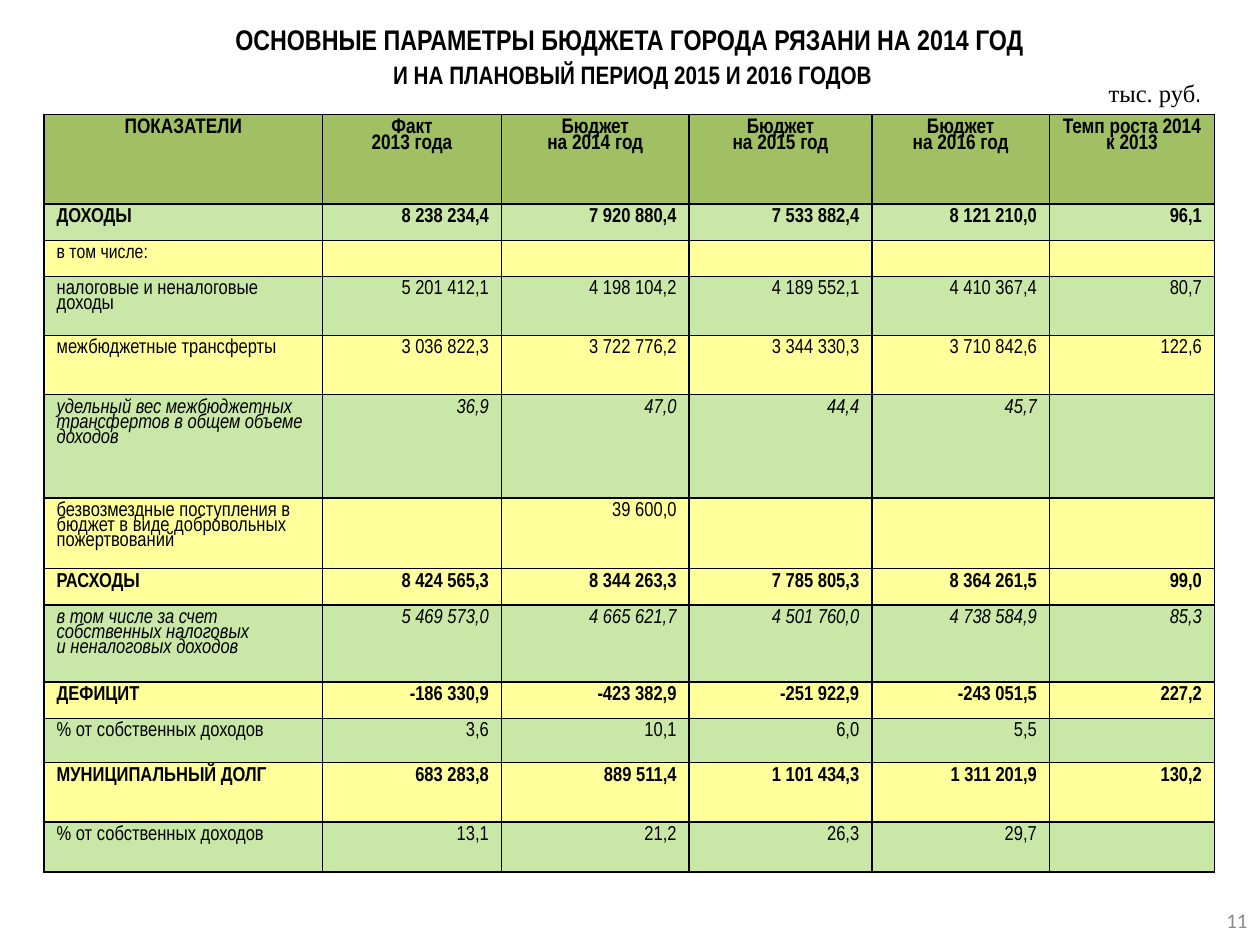
from lxml.etree import SubElement
from pptx import Presentation
from pptx.dml.color import RGBColor
from pptx.enum.text import MSO_ANCHOR, PP_ALIGN
from pptx.oxml.ns import qn
from pptx.util import Inches, Pt

COLORS = {"black": "000000", "header": "A1C064", "green": "C9E7A7",
          "yellow": "FFFF9B", "number": "8C8C8C"}


def write(paragraph, text, size=11.5, font="Arial Narrow", color="black",
          bold=False, italic=False, align=None, spacing=None):
    paragraph.alignment = align
    paragraph.line_spacing = spacing
    if not text:  # an empty cell still needs its text size to keep the row low
        SubElement(paragraph._p, qn("a:endParaRPr"), sz=str(int(size * 100)))
        return
    run = paragraph.add_run()
    run.text = text
    run.font.size = Pt(size)
    run.font.name = font
    run.font.bold = bold
    run.font.italic = italic
    run.font.color.rgb = RGBColor.from_string(COLORS[color])


def style_cell(cell, fill):
    """Draw black borders on all sides, then fill the cell."""
    properties = cell._tc.get_or_add_tcPr()
    for side in ("a:lnL", "a:lnR", "a:lnT", "a:lnB"):
        border = SubElement(properties, qn(side), w=str(Pt(1)))
        solid = SubElement(border, qn("a:solidFill"))
        SubElement(solid, qn("a:srgbClr"), val=COLORS["black"])
    cell.fill.solid()
    cell.fill.fore_color.rgb = RGBColor.from_string(COLORS[fill])


deck = Presentation()
deck.slide_width, deck.slide_height = Inches(10), Inches(7.5)
slide = deck.slides.add_slide(deck.slide_layouts[6])
unit = deck.slide_width // 100  # the slide is a grid of 100 by 75 units

# Title
title = slide.shapes.add_textbox(4.3 * unit, 1.3 * unit, 91.3 * unit, 4.7 * unit).text_frame
title.word_wrap = True
heading = title.paragraphs[0]
write(heading, "ОСНОВНЫЕ ПАРАМЕТРЫ БЮДЖЕТА ГОРОДА РЯЗАНИ НА 2014 ГОД",
      size=16.2, bold=True, align=PP_ALIGN.CENTER)
heading.add_line_break()
write(heading, " ", size=16.2, bold=True, align=PP_ALIGN.CENTER)
write(heading, "И НА ПЛАНОВЫЙ ПЕРИОД 2015 И 2016 ГОДОВ",
      size=14.4, bold=True, align=PP_ALIGN.CENTER)

# Budget table: row height in units, fill, text format, cells
column_widths = [22.1, 14.2, 14.9, 14.5, 14.1, 13.1]
header = {"size": 12, "bold": True}
plain, total, share = {}, {"bold": True}, {"italic": True}
budget_rows = [
    (7.1, "header", header, ["ПОКАЗАТЕЛИ", "Факт\n2013 года", "Бюджет\nна 2014 год",
                             "Бюджет\nна 2015 год", "Бюджет\nна 2016 год",
                             "Темп роста 2014 к 2013"]),
    (2.9, "green", total, ["ДОХОДЫ", "8 238 234,4", "7 920 880,4", "7 533 882,4",
                           "8 121 210,0", "96,1"]),
    (2.5, "yellow", {"size": 11}, ["в том числе:", "", "", "", "", ""]),
    (4.7, "green", plain, ["налоговые и неналоговые доходы", "5 201 412,1", "4 198 104,2",
                           "4 189 552,1", "4 410 367,4", "80,7"]),
    (4.7, "yellow", plain, ["межбюджетные трансферты", "3 036 822,3", "3 722 776,2",
                            "3 344 330,3", "3 710 842,6", "122,6"]),
    (8.2, "green", share, ["удельный вес межбюджетных трансфертов в общем объеме доходов",
                           "36,9", "47,0", "44,4", "45,7", ""]),
    (5.5, "yellow", plain, ["безвозмездные поступления в бюджет в виде добровольных "
                            "пожертвований", "", "39 600,0", "", "", ""]),
    (2.9, "yellow", total, ["РАСХОДЫ", "8 424 565,3", "8 344 263,3", "7 785 805,3",
                            "8 364 261,5", "99,0"]),
    (6.1, "green", share, ["в том числе за счет собственных налоговых\n"
                           "и неналоговых доходов", "5 469 573,0", "4 665 621,7",
                           "4 501 760,0", "4 738 584,9", "85,3"]),
    (2.9, "yellow", total, ["ДЕФИЦИТ", "-186 330,9", "-423 382,9", "-251 922,9",
                            "-243 051,5", "227,2"]),
    (3.5, "green", plain, ["% от собственных доходов", "3,6", "10,1", "6,0", "5,5", ""]),
    (4.7, "yellow", total, ["МУНИЦИПАЛЬНЫЙ ДОЛГ", "683 283,8", "889 511,4", "1 101 434,3",
                            "1 311 201,9", "130,2"]),
    (4, "green", plain, ["% от собственных доходов", "13,1", "21,2", "26,3", "29,7", ""]),
]
budget = slide.shapes.add_table(
    len(budget_rows), len(column_widths), 3.5 * unit, 9.1 * unit,
    int(sum(column_widths) * unit), int(sum(row[0] for row in budget_rows) * unit)).table
budget.horz_banding = False
for column, width in zip(budget.columns, column_widths):
    column.width = int(width * unit)
for r, (height, fill, text_format, values) in enumerate(budget_rows):
    budget.rows[r].height = int(height * unit)
    for c, value in enumerate(values):
        cell = budget.cell(r, c)
        style_cell(cell, fill)
        if r == 0:
            align = PP_ALIGN.CENTER
        else:
            align = PP_ALIGN.RIGHT if c else PP_ALIGN.LEFT
        for i, line in enumerate(value.split("\n")):
            frame = cell.text_frame
            paragraph = frame.add_paragraph() if i else frame.paragraphs[0]
            write(paragraph, line, align=align, spacing=0.8, **text_format)

# Unit of measure
measure = slide.shapes.add_textbox(87 * unit, 5.7 * unit, 9.4 * unit, 3.4 * unit).text_frame
measure.word_wrap = False
write(measure.paragraphs[0], "тыс. руб", size=14, font="Times New Roman")
write(measure.paragraphs[0], ".", size=14)

# Page number
page = slide.shapes.add_textbox(76.7 * unit, 71 * unit, 23.3 * unit, 4 * unit).text_frame
page.word_wrap = True
page.vertical_anchor = MSO_ANCHOR.MIDDLE
write(page.paragraphs[0], "11", size=12, font="Calibri", color="number", align=PP_ALIGN.RIGHT)

deck.save("out.pptx")
